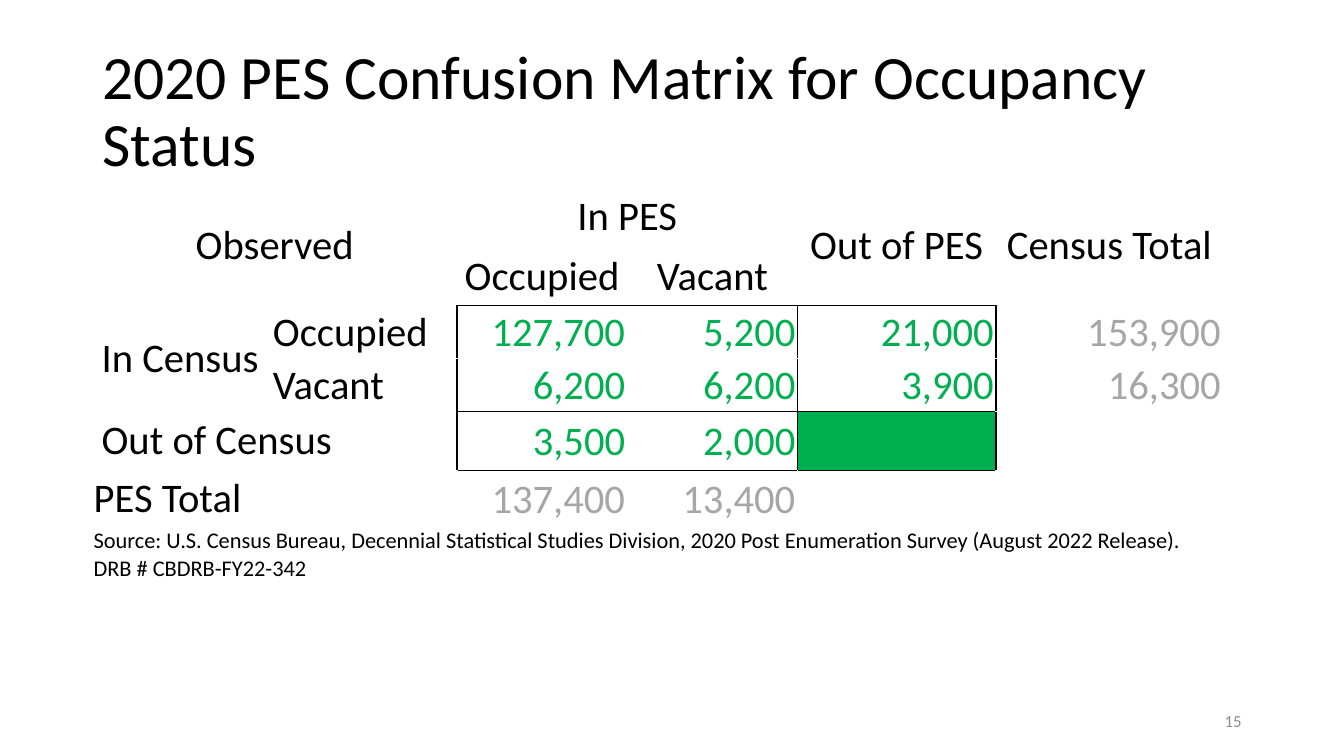
from dataclasses import dataclass

from lxml.etree import SubElement
from pptx import Presentation
from pptx.dml.color import RGBColor as Rgb
from pptx.enum.text import MSO_ANCHOR as Anchor, PP_ALIGN as Align
from pptx.oxml.ns import qn
from pptx.util import Cm, Pt


@dataclass(frozen=True)
class Theme:
    font: str = "Calibri"
    black: str = "000000"
    white: str = "FFFFFF"
    green: str = "00B050"
    grey: str = "A6A6A6"
    page: str = "8C8C8C"
    title: int = 44
    body: int = 29
    note: int = 16
    small: int = 12
    line: int = 1


THEME = Theme()

WIDTHS = [4.52, 0.71, 3.96, 4.29, 4.29, 5, 5.72]
HEIGHTS = [1.5, 1.5, 1.33, 1.33, 1.5, 1.4, 1.42]

# Cell margins in cm: left, top, right, bottom
WIDE = (0.23, 0.13, 0.23, 0.13)
TIGHT = (0.05, 0.05, 0.05, 0)
SNUG = (0.03, 0.03, 0.03, 0)

# Row, column, rows spanned, columns spanned, text, alignment, margins
LABELS = [
    (0, 0, 2, 3, "Observed", Align.CENTER, WIDE),
    (0, 3, 1, 2, "In PES", Align.CENTER, WIDE),
    (0, 5, 2, 1, "Out of PES", Align.CENTER, WIDE),
    (0, 6, 2, 1, "Census Total", Align.CENTER, WIDE),
    (1, 3, 1, 1, "Occupied", Align.CENTER, TIGHT),
    (1, 4, 1, 1, "Vacant", Align.CENTER, TIGHT),
    (2, 0, 2, 1, "In Census", Align.LEFT, WIDE),
    (2, 1, 1, 2, "Occupied", Align.LEFT, SNUG),
    (3, 1, 1, 2, "Vacant", Align.LEFT, SNUG),
    (4, 0, 1, 3, "Out of Census", Align.LEFT, WIDE),
    (5, 0, 1, 2, "PES Total", Align.LEFT, SNUG),
]
COUNTS = {
    2: ["127,700", "5,200", "21,000", "153,900"],
    3: ["6,200", "6,200", "3,900", "16,300"],
    4: ["3,500", "2,000"],
    5: ["137,400", "13,400"],
}
SOURCE = [
    "Source: U.S. Census Bureau, Decennial Statistical Studies Division, "
    "2020 Post Enumeration Survey (August 2022 Release).",
    "DRB # CBDRB-FY22-342",
]
# Grid lines of the matrix, and the rows and columns they run along
RULES_X, RULES_Y = {3, 5, 6}, {2, 4, 5}
BODY_ROWS, BODY_COLS = range(2, 5), range(3, 6)
TOTAL_ROW, TOTAL_COL = 5, 6


def add_run(para, text, size, color):
    run = para.add_run()
    run.text = text
    run.font.name = THEME.font
    run.font.size = Pt(size)
    run.font.color.rgb = Rgb.from_string(color)


def add_text(slide, box, text, size, color, align=Align.LEFT, space=None):
    frame = slide.shapes.add_textbox(*map(Cm, box)).text_frame
    frame.word_wrap = True
    frame.vertical_anchor = Anchor.MIDDLE
    para = frame.paragraphs[0]
    para.alignment = align
    para.line_spacing = space
    add_run(para, text, size, color)


def fill_cell(cell, lines, align, pad, color, size=THEME.body):
    cell.margin_left, cell.margin_top, cell.margin_right, cell.margin_bottom = map(Cm, pad)
    cell.vertical_anchor = Anchor.MIDDLE
    para = cell.text_frame.paragraphs[0]
    para.alignment = align
    for i, line in enumerate(lines):
        if i:
            para.add_line_break()
        add_run(para, line, size, color)


def rule_cell(cell, row, col):
    """Draw black edges on the matrix rules and white ones elsewhere."""
    end_row = row + (cell.span_height if cell.is_merge_origin else 1)
    end_col = col + (cell.span_width if cell.is_merge_origin else 1)
    across, down = row in BODY_ROWS, col in BODY_COLS
    edges = {
        "L": across and col in RULES_X,
        "R": across and end_col in RULES_X,
        "T": down and row in RULES_Y,
        "B": down and end_row in RULES_Y,
    }
    props = cell._tc.get_or_add_tcPr()
    for side, dark in edges.items():
        line = SubElement(props, qn(f"a:ln{side}"), w=str(Pt(THEME.line)))
        paint = SubElement(line, qn("a:solidFill"))
        SubElement(paint, qn("a:srgbClr"), val=THEME.black if dark else THEME.white)


def add_matrix(slide, box):
    left, top, width, height = map(Cm, box)
    table = slide.shapes.add_table(len(HEIGHTS), len(WIDTHS), left, top, width, height).table
    table.first_row = table.horz_banding = False
    for col, size in zip(table.columns, WIDTHS):
        col.width = Cm(size)
    for row, size in zip(table.rows, HEIGHTS):
        row.height = Cm(size)

    for row, col, tall, wide, text, align, pad in LABELS:
        cell = table.cell(row, col)
        if tall * wide > 1:
            cell.merge(table.cell(row + tall - 1, col + wide - 1))
        fill_cell(cell, [text], align, pad, THEME.black)
    for row, values in COUNTS.items():
        for col, text in enumerate(values, BODY_COLS.start):
            total = row == TOTAL_ROW or col == TOTAL_COL
            color = THEME.grey if total else THEME.green
            fill_cell(table.cell(row, col), [text], Align.RIGHT, TIGHT, color)
    last = len(HEIGHTS) - 1
    note = table.cell(last, 0)
    note.merge(table.cell(last, len(WIDTHS) - 1))
    fill_cell(note, SOURCE, Align.LEFT, SNUG, THEME.black, THEME.note)

    for row in range(len(HEIGHTS)):
        for col in range(len(WIDTHS)):
            cell = table.cell(row, col)
            rule_cell(cell, row, col)
            cell.fill.background()
    blank = table.cell(BODY_ROWS[-1], BODY_COLS[-1])
    blank.fill.solid()
    blank.fill.fore_color.rgb = Rgb.from_string(THEME.green)


def main():
    deck = Presentation()
    deck.slide_width, deck.slide_height = Cm(33.87), Cm(19.05)
    slide = deck.slides.add_slide(deck.slide_layouts[6])
    add_text(slide, (2.33, 1.01, 29.21, 3.68),
             "2020 PES Confusion Matrix for Occupancy Status",
             THEME.title, THEME.black, space=0.9)
    add_matrix(slide, (2.33, 4.7, sum(WIDTHS), sum(HEIGHTS)))
    add_text(slide, (23.92, 17.66, 7.62, 1.01), "15", THEME.small, THEME.page, Align.RIGHT)
    deck.save("out.pptx")


if __name__ == "__main__":
    main()
